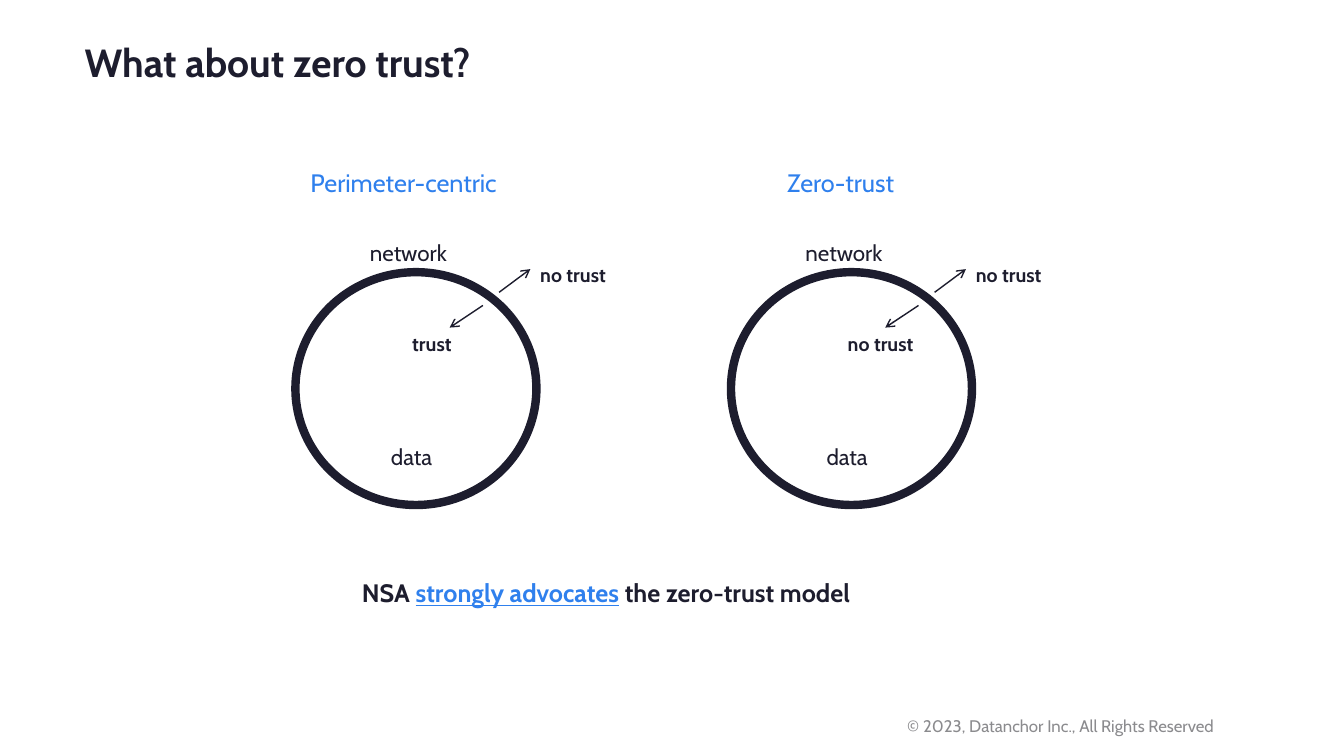
from lxml.etree import SubElement
from pptx import Presentation
from pptx.dml.color import RGBColor
from pptx.enum.shapes import MSO_CONNECTOR, MSO_SHAPE
from pptx.oxml.ns import qn
from pptx.util import Inches, Pt

DARK, BLUE, GREY = "1D1D2E", "2F80ED", "8B8B8E"


def rgb(value):
    return RGBColor.from_string(value)


class Deck:
    font = "Cabin"

    def __init__(self, width, height):
        self.prs = Presentation()
        self.prs.slide_width, self.prs.slide_height = Inches(width), Inches(height)
        self.s = self.prs.slides.add_slide(self.prs.slide_layouts[6])

    def text(self, x, y, w, h, runs, size, color=DARK, bold=False):
        """Runs is a string, or a list of (text, color, underline)."""
        if isinstance(runs, str):
            runs = [(runs, color, False)]
        tf = self.s.shapes.add_textbox(Inches(x), Inches(y), Inches(w), Inches(h)).text_frame
        tf.word_wrap = True
        p = tf.paragraphs[0]
        for content, run_color, underline in runs:
            r = p.add_run()
            r.text = content
            r.font.name, r.font.size = self.font, Pt(size)
            r.font.bold, r.font.underline = bold, underline
            r.font.color.rgb = rgb(run_color)

    def ring(self, x, y, w, h, weight):
        sp = self.s.shapes.add_shape(MSO_SHAPE.OVAL, Inches(x), Inches(y), Inches(w), Inches(h))
        sp.shadow.inherit = False
        sp.fill.background()
        sp.line.color.rgb, sp.line.width = rgb(DARK), Pt(weight)

    def arrow(self, x1, y1, x2, y2):
        c = self.s.shapes.add_connector(
            MSO_CONNECTOR.STRAIGHT, Inches(x1), Inches(y1), Inches(x2), Inches(y2))
        c.line.color.rgb, c.line.width = rgb(DARK), Pt(1)
        SubElement(c.line._get_or_add_ln(), qn("a:tailEnd"), type="arrow")
        SubElement(c._element.spPr, qn("a:effectLst"))

    def model(self, x, heading, heading_x, heading_w, inside, inside_w):
        """Network ring whose left edge is x, with its labels and arrows."""
        self.ring(x, 2.7, 2.39, 2.31, 6)
        self.text(heading_x, 1.61, heading_w, 0.4, heading, 18, BLUE)
        self.text(x + 0.64, 2.32, 1.1, 0.37, "network", 16)
        self.text(x + 0.85, 4.35, 0.67, 0.37, "data", 16)
        self.text(x + 2.33, 2.56, 1.1, 0.34, "no trust", 14, bold=True)
        self.text(x + 1.06, 3.24, inside_w, 0.34, inside, 14, bold=True)
        self.arrow(x + 2.02, 2.9, x + 2.33, 2.67)
        self.arrow(x + 1.86, 3.03, x + 1.53, 3.25)


def main():
    deck = Deck(13.33, 7.5)

    # Title
    deck.text(0.74, 0.33, 4.62, 0.57, "What about zero trust?", 28, bold=True)

    # The two trust models
    deck.model(2.93, "Perimeter-centric", 2.98, 2.28, "trust", 0.67)
    deck.model(7.25, "Zero-trust", 7.71, 1.47, "no trust", 0.96)

    # Conclusion
    deck.text(3.49, 5.68, 5.75, 0.4, [
        ("NSA ", DARK, False),
        ("strongly advocates", BLUE, True),
        (" the zero-trust model", DARK, False),
    ], 18, bold=True)

    # Footer
    deck.text(8.9, 7.05, 3.5, 0.3, "© 2023, Datanchor Inc., All Rights Reserved", 12, GREY)

    deck.prs.save("out.pptx")


if __name__ == "__main__":
    main()
